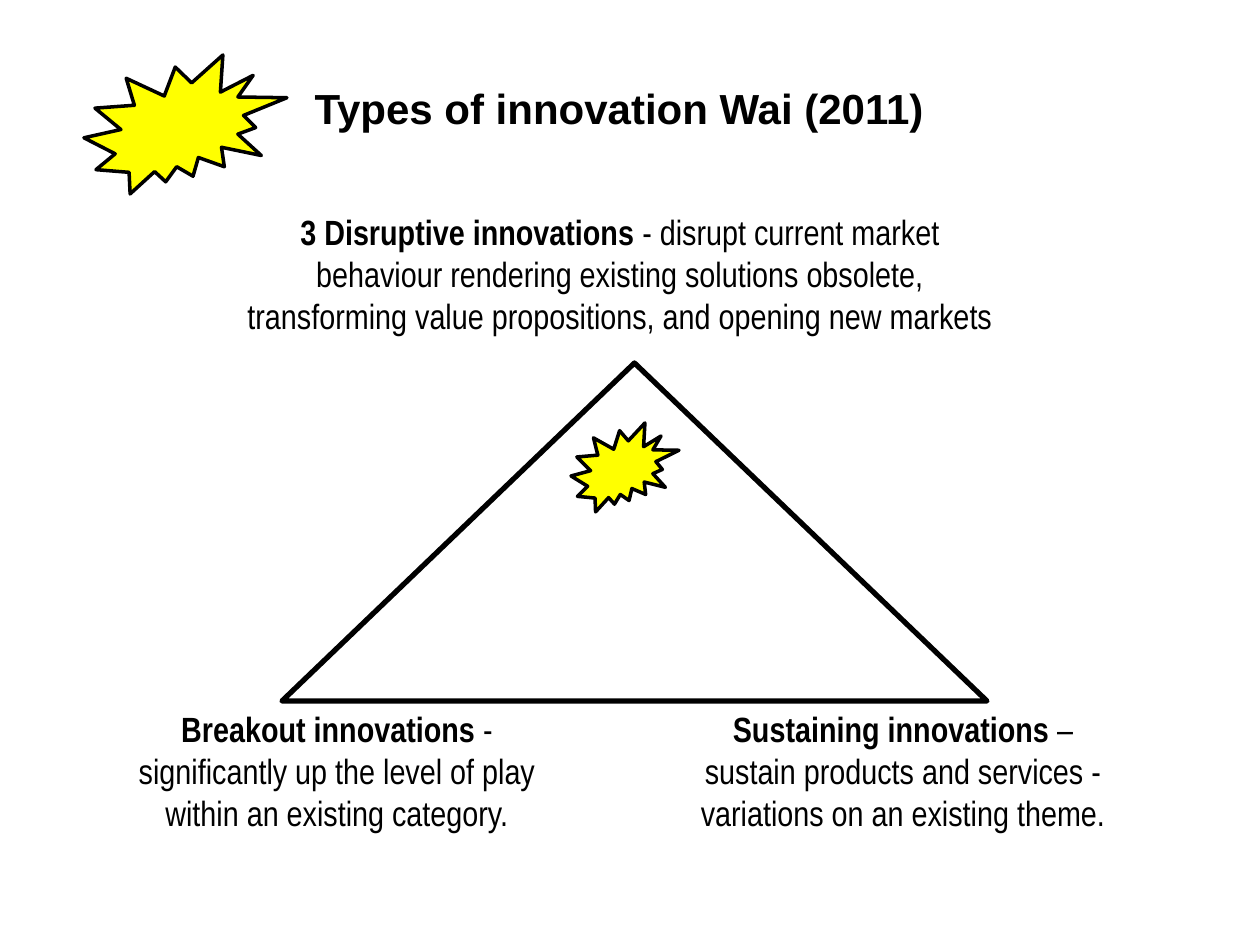
from pptx import Presentation
from pptx.dml.color import RGBColor
from pptx.enum.shapes import MSO_SHAPE
from pptx.enum.text import MSO_ANCHOR, MSO_AUTO_SIZE, PP_ALIGN
from pptx.util import Pt

SCALE = 914400 / 126


def px(*nums):
    return [round(n * SCALE) for n in nums]


def write(para, text, font="Arial Narrow", size=20, bold=False, color="000000"):
    run = para.add_run()
    run.text = text
    run.font.name = font
    run.font.size = Pt(size)
    run.font.bold = bold
    run.font.color.rgb = RGBColor.from_string(color)


deck = Presentation()
deck.slide_width, deck.slide_height = px(1260, 945)
slide = deck.slides.add_slide(deck.slide_layouts[5])

title = slide.shapes.title
title.left, title.top, title.width, title.height = px(302, 76, 640, 63)
frame = title.text_frame
frame.word_wrap = False
frame.auto_size = MSO_AUTO_SIZE.NONE
frame.vertical_anchor = MSO_ANCHOR.MIDDLE
frame.paragraphs[0].alignment = PP_ALIGN.LEFT
write(frame.paragraphs[0], "Types of innovation Wai (2011)", font="Arial", size=24, bold=True)

shapes = [
    (MSO_SHAPE.EXPLOSION2, (84, 55, 203, 139), "FFFF00", 2),
    (MSO_SHAPE.ISOSCELES_TRIANGLE, (282, 363, 705, 338), None, 3),
    (MSO_SHAPE.EXPLOSION2, (571, 423, 108, 89), "FFFF00", 2),
]
for kind, area, fill, width in shapes:
    shape = slide.shapes.add_shape(kind, *px(*area))
    shape.shadow.inherit = False
    if fill:
        shape.fill.solid()
        shape.fill.fore_color.rgb = RGBColor.from_string(fill)
    else:
        shape.fill.background()
    shape.line.color.rgb = RGBColor.from_string("000000")
    shape.line.width = Pt(width)

notes = [
    ((223, 204, 794, 140), "3 Disruptive innovations",
     [" - disrupt current market behaviour rendering existing solutions obsolete, "
      "transforming value propositions, and opening new markets"]),
    ((94, 701, 486, 140), "Breakout innovations",
     [" - significantly up the level of play within an existing category."]),
    ((630, 701, 546, 140), "Sustaining innovations",
     [" –", "sustain products and services - variations on an existing theme."]),
]
for area, head, lines in notes:
    frame = slide.shapes.add_textbox(*px(*area)).text_frame
    frame.word_wrap = True
    frame.vertical_anchor = MSO_ANCHOR.MIDDLE
    para = frame.paragraphs[0]
    write(para, head, bold=True)
    for n, line in enumerate(lines):
        if n:
            para = frame.add_paragraph()
        para.alignment = PP_ALIGN.CENTER
        write(para, line)

deck.save("out.pptx")
